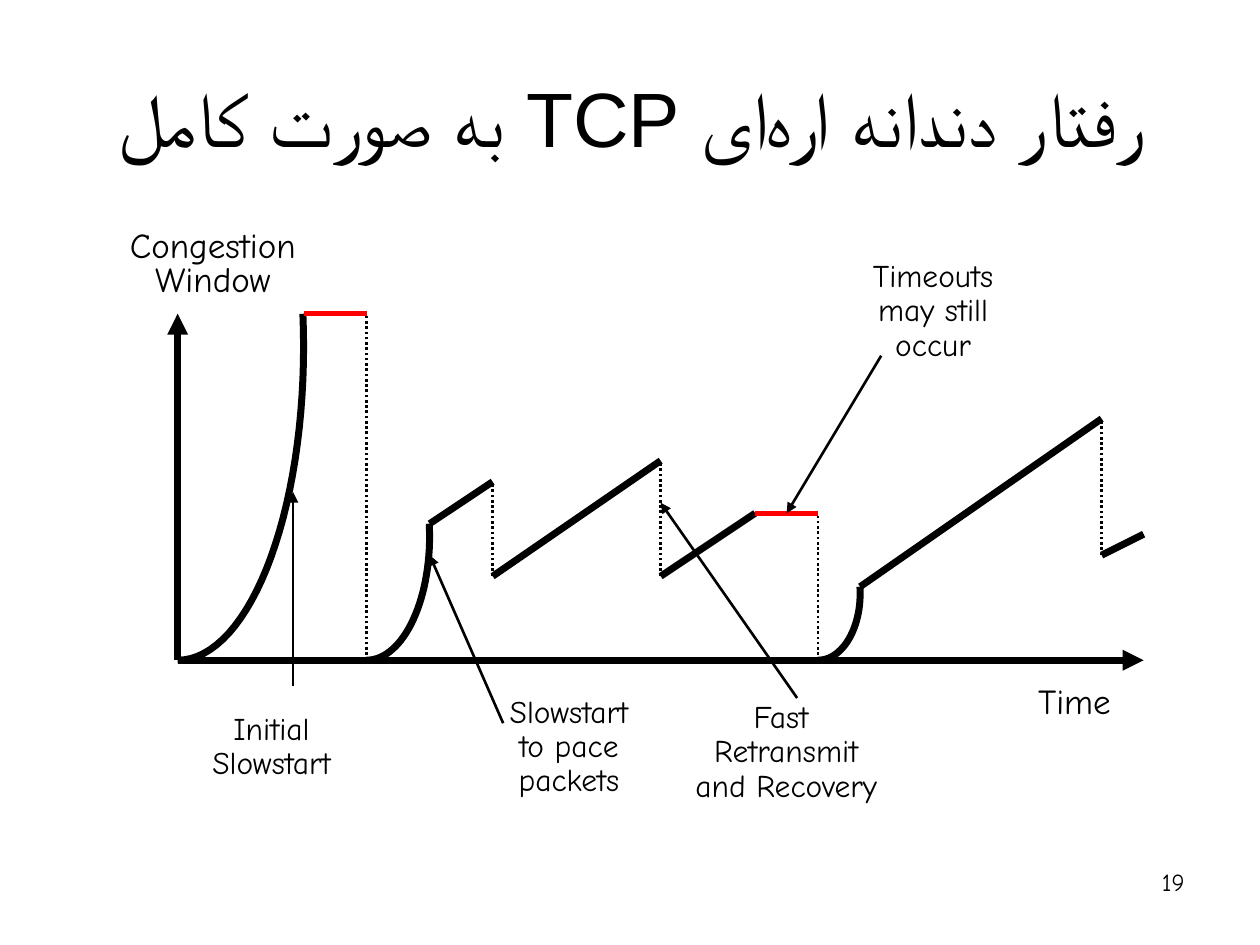
from math import cos, radians, sin

from lxml.etree import SubElement
from pptx import Presentation
from pptx.dml.color import RGBColor
from pptx.enum.dml import MSO_LINE
from pptx.enum.shapes import MSO_CONNECTOR
from pptx.enum.text import MSO_ANCHOR, MSO_AUTO_SIZE, PP_ALIGN
from pptx.oxml.ns import qn
from pptx.util import Inches, Pt

BLACK = RGBColor(0, 0, 0)
RED = RGBColor(255, 0, 0)
HAND = "Comic Neue"
ZWNJ = chr(0x200C)  # zero-width non-joiner, part of the Persian spelling

prs = Presentation()
prs.slide_width, prs.slide_height = Inches(10), Inches(7.5)
s = prs.slides.add_slide(prs.slide_layouts[5])

# Plot grid: origin of the axes, twelve units to the inch, rows counted upwards
LEFT, BASE, UNIT = 1.41, 5.24, 1 / 12


def at(col, row):
    return Inches(LEFT + col * UNIT), Inches(BASE - row * UNIT)


def segment(start, end, color=BLACK, width=4, dotted=False, arrow=False):
    line = s.shapes.add_connector(MSO_CONNECTOR.STRAIGHT, *at(*start), *at(*end))
    line.line.color.rgb = color
    line.line.width = Pt(width)
    if dotted:
        line.line.dash_style = MSO_LINE.ROUND_DOT
    sp_pr = line._element.spPr
    if arrow:
        SubElement(sp_pr.find(qn("a:ln")), qn("a:tailEnd"), type="triangle")
    SubElement(sp_pr, qn("a:effectLst"))


# Title
title = s.shapes.title
title.left, title.top = Inches(0.5), Inches(0.3)
title.width, title.height = Inches(9), Inches(1.25)
tf = title.text_frame
tf.auto_size = MSO_AUTO_SIZE.NONE
tf.vertical_anchor = MSO_ANCHOR.MIDDLE
p = tf.paragraphs[0]
p.alignment = PP_ALIGN.CENTER
p._p.get_or_add_pPr().set("rtl", "1")
r = p.add_run()
r.text = ZWNJ.join(["رفتار دندانه اره", "ای TCP به صورت کامل"])
r.font.size, r.font.name = Pt(44), "Arial"
r.font.color.rgb = BLACK
SubElement(r._r.get_or_add_rPr(), qn("a:cs"), typeface="Arial")

# Axes
segment((0, 0), (0, 33), arrow=True)
segment((0, 0), (92, 0), arrow=True)

# Slow start: a quarter ellipse carried slightly past its widest point
SWEEP = 96
for col, width, height in [(0, 12, 33), (18, 6, 13), (61, 4, 7)]:
    ry = height / (1 - cos(radians(SWEEP)))
    points = [at(col + width * sin(radians(a)), ry * (1 - cos(radians(a))))
              for a in range(0, SWEEP + 1, 3)]
    fb = s.shapes.build_freeform(*points[0])
    fb.add_line_segments(points[1:], close=False)
    curve = fb.convert_to_shape()
    curve.shadow.inherit = False
    curve.fill.background()
    curve.line.color.rgb = BLACK
    curve.line.width = Pt(4)

# Linear growth
for start, end in [((24, 13), (30, 17)), ((30, 8), (46, 19)), ((46, 8), (55, 14)),
                   ((65, 7), (88, 23)), ((88, 10), (92, 12))]:
    segment(start, end)

# Timeouts
for start, end in [((12, 33), (18, 33)), ((55, 14), (61, 14))]:
    segment(start, end, RED, 3)

# Window drops
for col, low, high in [(18, 0, 33), (30, 8, 17), (46, 8, 19), (61, 0, 14), (88, 10, 23)]:
    segment((col, low), (col, high), width=1.5, dotted=True)

# Pointers from the labels
for start, end in [((11, -2.5), (11, 16)), ((31, -6), (24, 10)),
                   ((59, -3.6), (46, 15)), ((67, 29), (58, 14))]:
    segment(start, end, width=1.5, arrow=True)

# Labels: box, font size, line spacing, alignment, lines
CENTER, RIGHT = PP_ALIGN.CENTER, PP_ALIGN.RIGHT
labels = [
    (0.89, 1.79, 1.6, 0.64, 20, 0.8, CENTER, ["Congestion", "Window"]),
    (8.14, 5.34, 0.84, 0.43, 20, 1.0, PP_ALIGN.LEFT, ["Time"]),
    (1.48, 5.61, 1.35, 0.64, 18, 0.9, CENTER, ["Initial", "Slowstart"]),
    (3.84, 5.48, 1.35, 0.91, 18, 0.9, CENTER, ["Slowstart", "to pace", "packets"]),
    (5.37, 5.52, 1.74, 0.91, 18, 0.9, CENTER, ["Fast ", "Retransmit", "and Recovery"]),
    (6.77, 2.02, 1.27, 0.91, 18, 0.9, CENTER, ["Timeouts", "may still", "occur"]),
    (7.17, 6.83, 2.33, 0.52, 14, 1.0, RIGHT, ["19"]),
]
for x, y, w, h, size, spacing, align, lines in labels:
    tf = s.shapes.add_textbox(Inches(x), Inches(y), Inches(w), Inches(h)).text_frame
    tf.word_wrap = align == RIGHT
    for i, text in enumerate(lines):
        p = tf.add_paragraph() if i else tf.paragraphs[0]
        p.alignment, p.line_spacing = align, spacing
        r = p.add_run()
        r.text = text
        r.font.size, r.font.name = Pt(size), HAND
        r.font.color.rgb = BLACK

prs.save("out.pptx")
